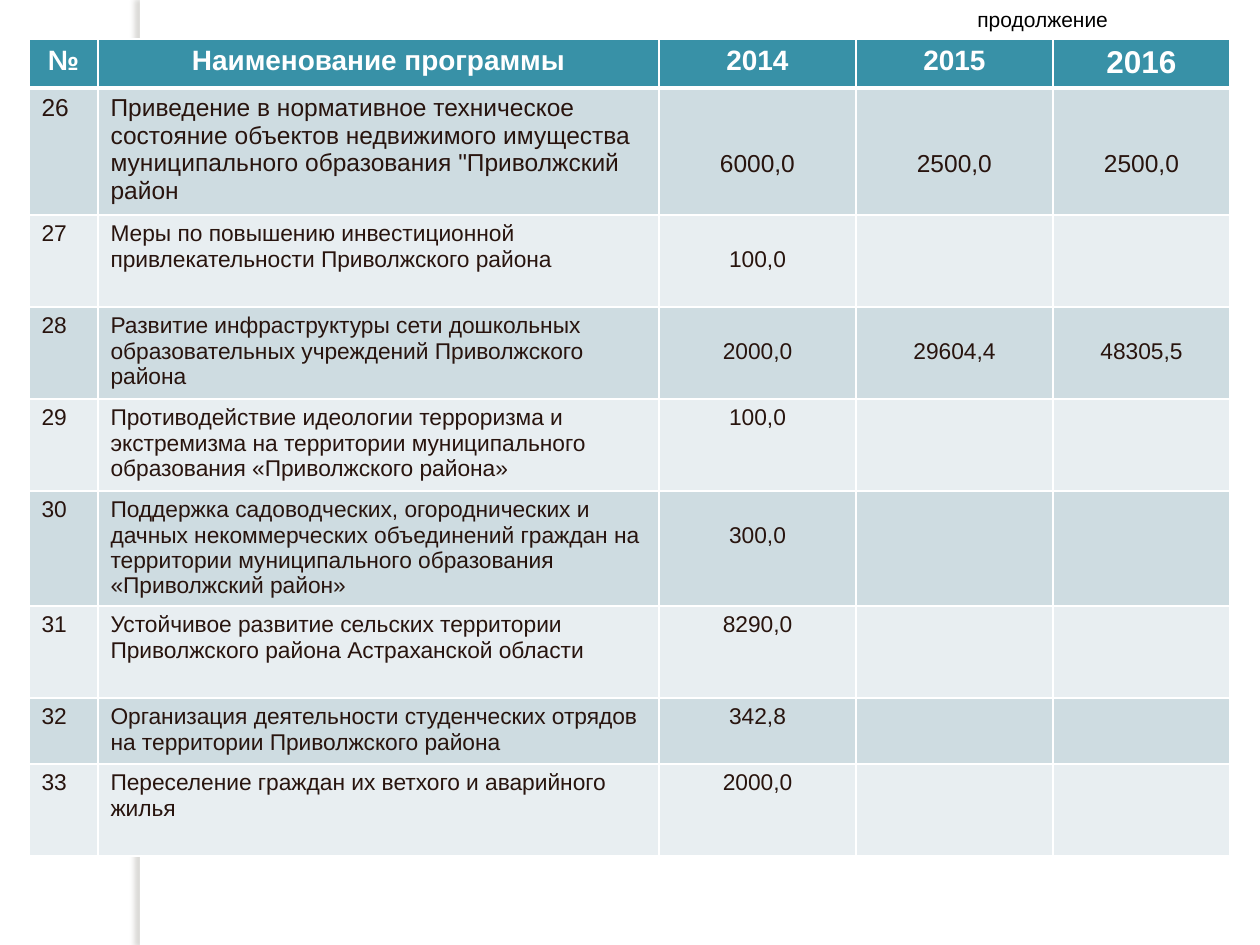
"""Build the slide that continues the table of municipal programmes."""
from lxml.etree import SubElement
from pptx import Presentation
from pptx.dml.color import RGBColor as Rgb
from pptx.enum.shapes import MSO_SHAPE as Shape
from pptx.enum.text import PP_ALIGN as Align
from pptx.oxml.ns import qn
from pptx.util import Emu, Pt

HEADER = ["№", "Наименование программы", "2014", "2015", "2016"]
PROGRAMMES = [
    ("26", 'Приведение в нормативное техническое состояние объектов недвижимого имущества муниципального образования "Приволжский район',
     "6000,0", "2500,0", "2500,0"),
    ("27", "Меры по повышению инвестиционной привлекательности Приволжского района", "100,0", "", ""),
    ("28", "Развитие инфраструктуры сети дошкольных образовательных учреждений Приволжского района",
     "2000,0", "29604,4", "48305,5"),
    ("29", "Противодействие идеологии терроризма и экстремизма на территории муниципального образования «Приволжского района»",
     "100,0", "", ""),
    ("30", "Поддержка садоводческих, огороднических и дачных некоммерческих объединений граждан на территории муниципального образования «Приволжский район»",
     "300,0", "", ""),
    ("31", "Устойчивое развитие сельских территории Приволжского района Астраханской области", "8290,0", "", ""),
    ("32", "Организация деятельности студенческих отрядов на территории Приволжского района", "342,8", "", ""),
    ("33", "Переселение граждан их ветхого и аварийного жилья", "2000,0", "", ""),
]
COLUMN_WIDTHS = [69, 561, 197, 197, 177]
ROW_HEIGHTS = [49, 127, 92, 92, 92, 115, 92, 66, 92]
VALUE_DROPS = {1: 56, 2: 26, 3: 26, 5: 26}
CELL_INSET = 6

THEME = {
    "font": "Arial", "white": "FFFFFF", "black": "000000", "ink": "28140E",
    "header": "3891A7", "bands": ("E8EEF1", "CEDCE1"), "shadow": "736F63",
    "note_size": 12, "header_size": 16, "last_year_size": 18,
    "first_row_size": 14, "body_size": 13,
}


def px(length):
    return Emu(round(length * 914400 / 126))


def paint(fill, color):
    fill.solid()
    fill.fore_color.rgb = Rgb.from_string(color)


def write(frame, text, size, color, bold=False, align=Align.LEFT):
    para = frame.paragraphs[0]
    para.alignment = align
    span = para.add_run()
    span.text = text
    for name, value in {"name": THEME["font"], "size": Pt(size), "bold": bold}.items():
        setattr(span.font, name, value)
    span.font.color.rgb = Rgb.from_string(color)


def add_solid(parent, color):
    fill = SubElement(parent, qn("a:solidFill"))
    SubElement(fill, qn("a:srgbClr"), val=color)


def add_borders(cell, bottom):
    properties = cell._tc.get_or_add_tcPr()
    for side, width in {"L": 1, "R": 1, "T": 1, "B": bottom}.items():
        line = SubElement(properties, qn(f"a:ln{side}"), w=str(Pt(width)))
        add_solid(line, THEME["white"])


def add_side_strip(page):
    strip = page.shapes.add_shape(Shape.RECTANGLE, px(140), 0, px(10), px(945))
    paint(strip.fill, THEME["white"])
    strip.line.fill.background()
    effects = SubElement(strip._element.spPr, qn("a:effectLst"))
    shadow = SubElement(effects, qn("a:outerShdw"), blurRad=str(Pt(3)),
                        dist=str(Pt(3)), dir="10800000", rotWithShape="0")
    color = SubElement(shadow, qn("a:srgbClr"), val=THEME["shadow"])
    SubElement(color, qn("a:alpha"), val="25000")


def text_size(row, column):
    if row == 0:
        return THEME["last_year_size" if column == len(HEADER) - 1 else "header_size"]
    return THEME["first_row_size" if row == 1 else "body_size"]


def add_programme_table(page):
    rows = [HEADER, *PROGRAMMES]
    table = page.shapes.add_table(
        len(rows), len(HEADER), px(29), px(39),
        px(sum(COLUMN_WIDTHS)), px(sum(ROW_HEIGHTS))).table
    for column, width in zip(table.columns, COLUMN_WIDTHS):
        column.width = px(width)
    for index, (row, height) in enumerate(zip(rows, ROW_HEIGHTS)):
        table.rows[index].height = px(height)
        heading = index == 0
        for column, text in enumerate(row):
            cell = table.cell(index, column)
            add_borders(cell, 3 if heading else 1)
            paint(cell.fill, THEME["header"] if heading else THEME["bands"][index % 2])
            if not text:
                continue
            centred = heading or column > 1
            if column > 1:
                cell.margin_top = px(CELL_INSET + VALUE_DROPS.get(index, 0))
            write(cell.text_frame, text, text_size(index, column),
                  THEME["white" if heading else "ink"], heading,
                  Align.CENTER if centred else Align.LEFT)


def main():
    deck = Presentation()
    deck.slide_width, deck.slide_height = px(1260), px(945)
    page = deck.slides.add_slide(deck.slide_layouts[6])
    paint(page.background.fill, THEME["white"])
    add_side_strip(page)
    add_programme_table(page)
    note = page.shapes.add_textbox(px(965), 0, px(246), px(38))
    note.text_frame.word_wrap = True
    write(note.text_frame, "продолжение", THEME["note_size"], THEME["black"])
    deck.save("out.pptx")


if __name__ == "__main__":
    main()
